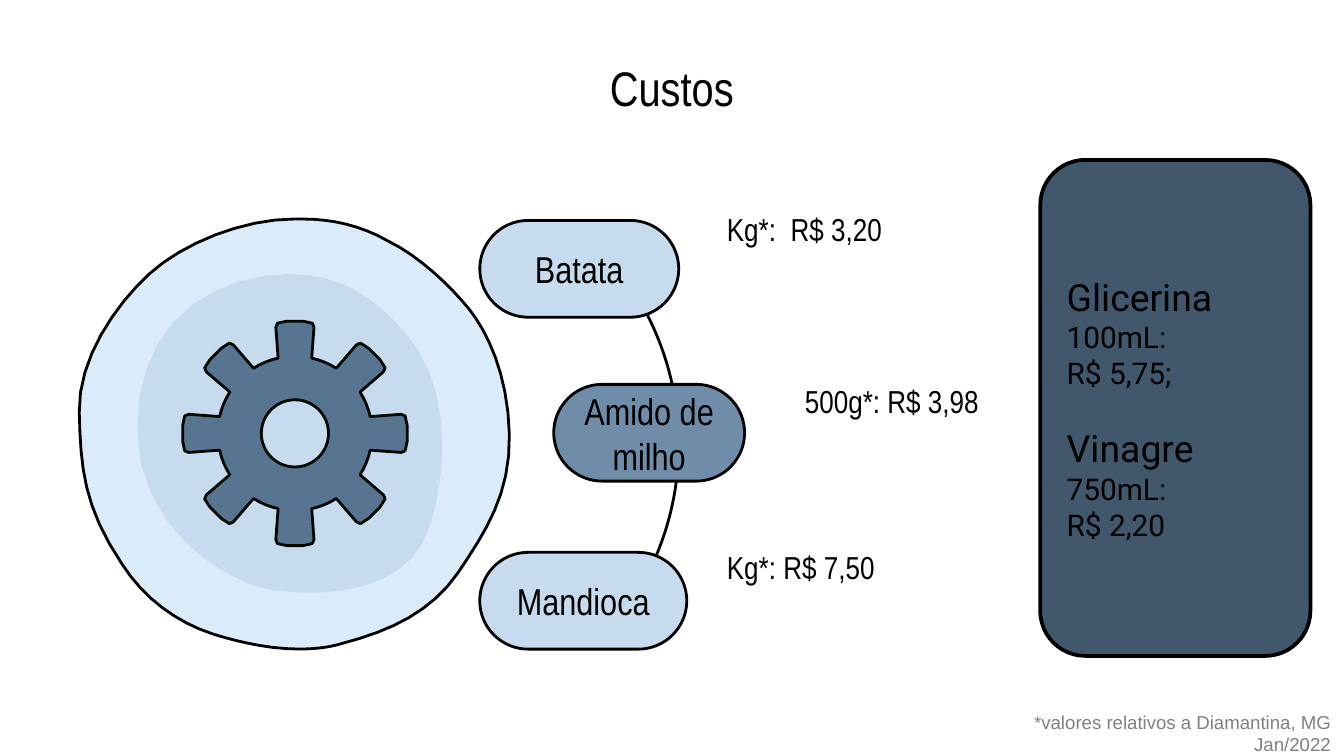
from dataclasses import dataclass
from math import cos, pi, sin

from pptx import Presentation
from pptx.dml.color import RGBColor
from pptx.enum.shapes import MSO_SHAPE
from pptx.enum.text import MSO_ANCHOR, MSO_AUTO_SIZE, PP_ALIGN
from pptx.util import Inches, Pt

COLS, ROWS = 100, 56.25  # one grid step is a tenth of an inch


@dataclass(frozen=True)
class Theme:
    ink: str = "000000"
    edge: str = "020600"
    pale: str = "DAECFA"
    light: str = "C6DCEE"
    mid: str = "6F8DA8"
    gear: str = "577590"
    dark: str = "41586C"
    grey: str = "808080"
    narrow: str = "Arial Narrow"
    plain: str = "Arial"
    round: str = "Roboto"
    title: int = 26
    head: int = 20
    price: int = 17
    body: int = 16
    note: int = 10
    thin: float = 1.5
    thick: float = 2


def grid(*steps):
    return [Inches(step / 10) for step in steps]


def trace(start, curves, steps=8):
    """Points along a chain of cubic curves, each given as x1 y1 x2 y2 x y."""
    points = [start]
    for x1, y1, x2, y2, x3, y3 in curves:
        x0, y0 = points[-1]
        for step in range(1, steps + 1):
            t = step / steps
            a, b, c, d = (1 - t) ** 3, 3 * t * (1 - t) ** 2, 3 * t * t * (1 - t), t ** 3
            points.append((a * x0 + b * x1 + c * x2 + d * x3,
                           a * y0 + b * y1 + c * y2 + d * y3))
    return points


def ring(x, y, r, count=48):
    return [(x + r * cos(2 * pi * i / count), y + r * sin(2 * pi * i / count))
            for i in range(count)]


def cog(x, y, teeth=8):
    """Outline of a gear: one tooth and one stretch of rim, turned round the centre."""
    side = [(5.6, 1.25), (7.9, 1.42), (8.2, 1.3), (8.35, 0.6)]
    tooth = [(r, -w) for r, w in side] + side[::-1]
    rim = [(5.74 * cos(a * pi / 180), 5.74 * sin(a * pi / 180)) for a in (17.5, 22.5, 27.5)]
    points = []
    for i in range(teeth):
        turn = 2 * pi * i / teeth
        points += [(x + r * cos(turn) - w * sin(turn), y + r * sin(turn) + w * cos(turn))
                   for r, w in tooth + rim]
    return points


class Board:
    def __init__(self, deck, theme):
        self.theme = theme
        self.slide = deck.slides.add_slide(deck.slide_layouts[5])
        self.shapes = self.slide.shapes

    def paint(self, shape, fill=None, line=None, width=None):
        shape.shadow.inherit = False
        if fill:
            shape.fill.solid()
            shape.fill.fore_color.rgb = RGBColor.from_string(fill)
        else:
            shape.fill.background()
        if line:
            shape.line.color.rgb = RGBColor.from_string(line)
            shape.line.width = Pt(width or self.theme.thin)
        else:
            shape.line.fill.background()
        return shape

    def letter(self, shape, text, sizes, font, color=None, align=PP_ALIGN.LEFT,
               anchor=MSO_ANCHOR.MIDDLE, inset=0.5):
        """Fill a shape with text; sizes holds one size per paragraph."""
        frame = shape.text_frame
        frame.word_wrap = True
        frame.auto_size = MSO_AUTO_SIZE.NONE
        frame.vertical_anchor = anchor
        frame.margin_left, frame.margin_right = grid(1, 1)
        frame.margin_top, frame.margin_bottom = grid(inset, inset)
        frame.text = text
        for para, size in zip(frame.paragraphs, sizes):
            para.alignment = align
            for run in para.runs:
                run.font.size = Pt(size)
                run.font.name = font
                run.font.color.rgb = RGBColor.from_string(color or self.theme.ink)
        return frame

    def title(self, text, *box):
        shape = self.shapes.title
        shape.left, shape.top, shape.width, shape.height = grid(*box)
        self.letter(shape, text, [self.theme.title], self.theme.narrow,
                    align=PP_ALIGN.CENTER, anchor=MSO_ANCHOR.TOP, inset=1)

    def outline(self, *loops, **style):
        first, *rest = [[tuple(grid(*point)) for point in loop] for loop in loops]
        pen = self.shapes.build_freeform(*first[0])
        pen.add_line_segments(first[1:], close=True)
        for loop in rest:
            pen.move_to(*loop[0])
            pen.add_line_segments(loop[1:], close=True)
        return self.paint(pen.convert_to_shape(), **style)

    def shape(self, kind, *box, **style):
        return self.paint(self.shapes.add_shape(kind, *grid(*box)), **style)

    def arc(self, x, y, r, start, end):
        shape = self.shape(MSO_SHAPE.ARC, x - r, y - r, 2 * r, 2 * r, line=self.theme.ink)
        for i, angle in enumerate((start, end)):
            shape.adjustments[i] = angle * 0.6

    def pill(self, text, x, y, w, fill):
        shape = self.shape(MSO_SHAPE.ROUNDED_RECTANGLE, x, y, w, 7.2,
                           fill=fill, line=self.theme.ink)
        shape.adjustments[0] = 0.5
        self.letter(shape, text, [self.theme.head], self.theme.narrow,
                    align=PP_ALIGN.CENTER, inset=1)

    def label(self, text, *box, **style):
        return self.letter(self.shapes.add_textbox(*grid(*box)), text, **style)


def main():
    deck = Presentation()
    deck.slide_width, deck.slide_height = grid(COLS, ROWS)
    look = Theme()
    board = Board(deck, look)
    board.title("Custos", 5, 3.3, 90, 6.3)

    disc = trace((22.5, 16.3), [
        (22.3, 16.3, 22.1, 16.3, 21.9, 16.3), (18.1, 16.3, 13.6, 18.1, 11.1, 20.4),
        (8.6, 22.7, 5.8, 26.7, 5.9, 30.7), (6, 34.7, 6.2, 37.7, 9.1, 42),
        (10.7, 44.5, 13.1, 46.3, 15.9, 47.2), (16.9, 47.5, 19.5, 48.3, 22.3, 48.3),
        (23.3, 48.3, 24.4, 48.2, 25.4, 47.9), (29.2, 46.9, 32.1, 45.5, 34.1, 42.6),
        (36.1, 39.6, 38, 36.8, 37.9, 32.3), (37.8, 27.8, 36.2, 24.6, 34.9, 23),
        (33.6, 21.4, 31.3, 19.1, 28.8, 17.9), (26.9, 16.8, 24.7, 16.3, 22.5, 16.3)])
    core = trace((21.6, 20.4), [
        (21, 20.4, 20.4, 20.5, 19.8, 20.5), (14.1, 21.3, 10.2, 25.3, 10.2, 31.9),
        (10.2, 39.2, 16.6, 43.3, 20.2, 43.9), (21.1, 44, 22, 44.1, 23.1, 44.1),
        (26.6, 44.1, 30.8, 43.1, 32, 39.1), (33.6, 34, 33.2, 28.1, 30.1, 24.7),
        (27.9, 22.2, 25.4, 20.4, 21.6, 20.4)])
    board.outline(disc, fill=look.pale, line=look.ink)
    board.outline(core, fill=look.light)
    hub = (21.95, 32.25)
    board.outline(cog(*hub), ring(*hub, 2.5), fill=look.gear, line=look.edge)

    board.arc(29.3, 33.1, 21.2, 323.8, 34)
    items = [
        ("Batata", "Kg*:  R$ 3,20", 35.7, 16.4, 14.8, look.light, 53.1, 15.2),
        ("Amido de milho", "500g*: R$ 3,98", 41.2, 28.6, 14.2, look.mid, 58.9, 28),
        ("Mandioca", "Kg*: R$ 7,50", 35.7, 41.1, 15.4, look.light, 53.1, 40.3),
    ]
    for name, price, x, y, w, fill, left, top in items:
        board.pill(name, x, y, w, fill)
        board.label(price, left, top, 36.1, 3.7, sizes=[look.price],
                    font=look.narrow, inset=1)

    board.label("*valores relativos a Diamantina, MG\nJan/2022", 75.7, 52.4, 24.3, 4.4,
                sizes=[look.note] * 2, font=look.plain, color=look.grey,
                align=PP_ALIGN.RIGHT, anchor=MSO_ANCHOR.TOP)

    panel = board.shape(MSO_SHAPE.ROUNDED_RECTANGLE, 77.4, 11.9, 20.1, 36.9,
                        fill=look.dark, line=look.ink, width=look.thick)
    frame = board.letter(panel, "Glicerina\n100mL:\nR$ 5,75;\nVinagre\n750mL:\nR$ 2,20",
                         [look.head, look.body, look.body] * 2, look.round)
    frame.paragraphs[3].space_before = Pt(19)

    deck.save("out.pptx")


if __name__ == "__main__":
    main()
